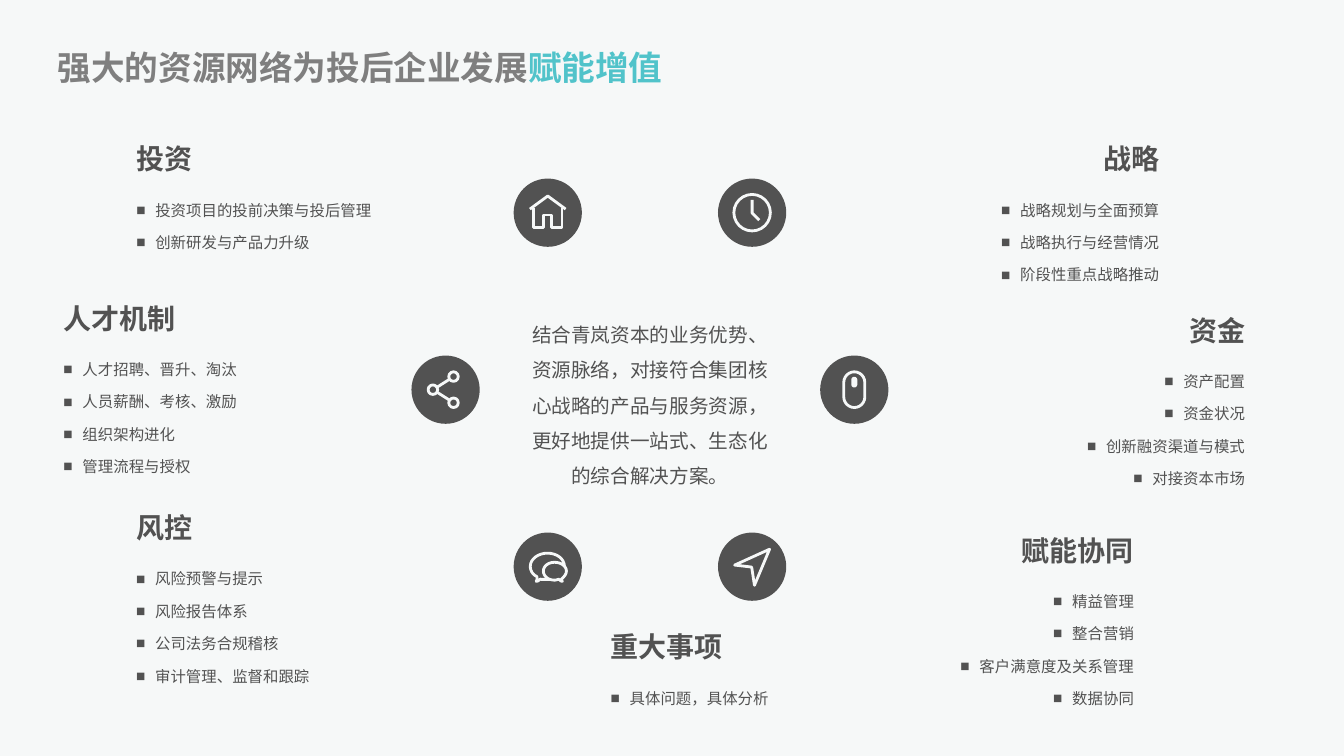
from math import cos, radians, sin

from lxml.etree import SubElement
from pptx import Presentation
from pptx.dml.color import RGBColor
from pptx.enum.shapes import MSO_CONNECTOR, MSO_SHAPE
from pptx.enum.text import MSO_ANCHOR, MSO_AUTO_SIZE, PP_ALIGN
from pptx.oxml.ns import qn
from pptx.util import Cm, Pt

COLORS = {"background": "F6F8F8", "dark": "525252", "title": "7F7F7F", "accent": "51C3CA"}
FONT = "Open Sans"
RING_CENTER = (16.38, 9.82)
RING_RADIUS = 5.15
BADGE_RADIUS = 0.86
TOPIC_WIDTH = 7.98
LEFT, CENTER, RIGHT = PP_ALIGN.LEFT, PP_ALIGN.CENTER, PP_ALIGN.RIGHT

# Heading, left, top, alignment, items
TOPICS = [
    ("投资", 3.18, 3.45, LEFT, ["投资项目的投前决策与投后管理", "创新研发与产品力升级"]),
    ("战略", 21.49, 3.45, RIGHT, ["战略规划与全面预算", "战略执行与经营情况", "阶段性重点战略推动"]),
    ("人才机制", 1.35, 7.47, LEFT,
     ["人才招聘、晋升、淘汰", "人员薪酬、考核、激励", "组织架构进化", "管理流程与授权"]),
    ("资金", 23.65, 7.77, RIGHT, ["资产配置", "资金状况", "创新融资渠道与模式", "对接资本市场"]),
    ("风控", 3.18, 12.75, LEFT,
     ["风险预警与提示", "风险报告体系", "公司法务合规稽核", "审计管理、监督和跟踪"]),
    ("赋能协同", 20.85, 13.31, RIGHT, ["精益管理", "整合营销", "客户满意度及关系管理", "数据协同"]),
    ("重大事项", 15.14, 15.75, LEFT, ["具体问题，具体分析"]),
]

# Cubic curves: a start point, then two controls and an end for each segment
LARGE_BUBBLE = [
    (0.06, 0.32), (0.04, 0.32), (0.01, 0.32), (-0.01, 0.32), (-0.06, 0.32), (-0.11, 0.32),
    (-0.17, 0.32), (-0.19, 0.29), (-0.22, 0.37), (-0.29, 0.37), (-0.29, 0.37), (-0.24, 0.27),
    (-0.29, 0.24), (-0.39, 0.19), (-0.44, 0.09), (-0.44, -0.01), (-0.44, -0.19),
    (-0.24, -0.34), (-0.01, -0.34), (0.24, -0.34), (0.42, -0.19), (0.42, -0.01),
]
SMALL_BUBBLE = [
    (-0.11, 0.11), (-0.11, 0.24), (0.01, 0.34), (0.17, 0.34), (0.22, 0.34), (0.24, 0.32),
    (0.29, 0.32), (0.29, 0.32), (0.32, 0.37), (0.37, 0.37), (0.37, 0.37), (0.32, 0.32),
    (0.37, 0.29), (0.42, 0.24), (0.47, 0.19), (0.47, 0.11), (0.47, -0.01), (0.34, -0.11),
    (0.17, -0.11), (0.01, -0.11), (-0.11, -0.01), (-0.11, 0.11),
]


def color(name):
    return RGBColor.from_string(COLORS[name])


def curve(points, steps=8):
    """Turn a chain of cubic curves into the points of a polyline."""
    line = [points[0]]
    for start in range(0, len(points) - 1, 3):
        segment = points[start:start + 4]
        for step in range(1, steps + 1):
            t = step / steps
            weights = ((1 - t) ** 3, 3 * t * (1 - t) ** 2, 3 * t * t * (1 - t), t ** 3)
            line.append(tuple(sum(w * p[axis] for w, p in zip(weights, segment))
                              for axis in (0, 1)))
    return line


class Badge:
    """A dark disc on the ring; icon parts are placed in cm from its centre."""

    def __init__(self, slide, angle):
        self.x = RING_CENTER[0] + RING_RADIUS * cos(radians(angle))
        self.y = RING_CENTER[1] - RING_RADIUS * sin(radians(angle))
        self.shapes = slide.shapes.add_group_shape().shapes
        disc = self.preset(MSO_SHAPE.OVAL, 0, 0, 2 * BADGE_RADIUS, 2 * BADGE_RADIUS)
        disc.line.fill.background()

    def point(self, x, y):
        return Cm(self.x + x), Cm(self.y + y)

    def style(self, shape):
        shape.shadow.inherit = False
        shape.fill.solid()
        shape.fill.fore_color.rgb = color("dark")
        self.stroke(shape)
        return shape

    def stroke(self, shape):
        shape.line.color.rgb = color("background")
        shape.line.width = Pt(2)

    def preset(self, kind, x, y, width, height):
        left, top = self.point(x - width / 2, y - height / 2)
        return self.style(self.shapes.add_shape(kind, left, top, Cm(width), Cm(height)))

    def pill(self, x, y, width, height):
        self.preset(MSO_SHAPE.ROUNDED_RECTANGLE, x, y, width, height).adjustments[0] = 0.5

    def outline(self, points, close=False):
        start, *rest = [self.point(x, y) for x, y in points]
        builder = self.shapes.build_freeform(*start)
        builder.add_line_segments(rest, close=close)
        self.style(builder.convert_to_shape())

    def line(self, start, end):
        connector = self.shapes.add_connector(
            MSO_CONNECTOR.STRAIGHT, *self.point(*start), *self.point(*end))
        self.stroke(connector)
        SubElement(connector.line._get_or_add_ln().getparent(), qn("a:effectLst"))


class ResourceSlide:
    def __init__(self, presentation):
        self.slide = presentation.slides.add_slide(presentation.slide_layouts[4])
        self.slide.background.fill.solid()
        self.slide.background.fill.fore_color.rgb = color("background")
        self.bodies = [shape for shape in self.slide.placeholders
                       if shape.placeholder_format.idx > 0]

    def place(self, shape, left, top, width, height):
        shape.left, shape.top, shape.width, shape.height = map(Cm, (left, top, width, height))
        frame = shape.text_frame
        frame.word_wrap = True
        frame.auto_size = MSO_AUTO_SIZE.NONE
        frame.vertical_anchor = MSO_ANCHOR.TOP
        return frame

    def title(self, plain, accented):
        frame = self.place(self.slide.shapes.title, 1.2, 1.17, 16.94, 1.19)
        paragraph = frame.paragraphs[0]
        paragraph.alignment = LEFT
        paragraph.line_spacing = 0.9
        for text, font, name in ((plain, "Noto Sans CJK SC", "title"),
                                 (accented, "Arial", "accent")):
            run = paragraph.add_run()
            run.text = text
            run.font.name, run.font.size, run.font.bold = font, Pt(24), True
            run.font.color.rgb = color(name)

    def text(self, box, lines, size, alignment=LEFT, spacing=1.0, bold=False, bullet=False):
        """Fill the next free body placeholder, or a text box once none is left."""
        shape = (self.bodies.pop(0) if self.bodies
                 else self.slide.shapes.add_textbox(*map(Cm, box)))
        frame = self.place(shape, *box)
        frame.text = "\n".join(lines)
        for paragraph in frame.paragraphs:
            if bullet:
                properties = paragraph._p.get_or_add_pPr()
                properties.set("marL", str(Cm(0.48)))
                properties.set("indent", str(-Cm(0.48)))
                SubElement(properties, qn("a:buFont"), typeface="Arial")
                SubElement(properties, qn("a:buChar"), char="■")
            paragraph.alignment = alignment
            paragraph.line_spacing = spacing
            paragraph.space_before = Pt(6)
            font = paragraph.font
            font.name, font.size, font.bold = FONT, Pt(size), bold
            font.color.rgb = color("dark")

    def topic(self, heading, left, top, alignment, items):
        self.text((left, top, TOPIC_WIDTH, 1.11), [heading], 20, alignment, bold=True)
        height = 0.86 + 0.83 * (len(items) - 1)
        self.text((left, top + 1.34, TOPIC_WIDTH, height), items, 11, alignment, 1.3, bullet=True)

    def icons(self):
        clock = Badge(self.slide, 60)
        clock.preset(MSO_SHAPE.OVAL, 0, 0, 0.92, 0.92)
        clock.outline([(0, -0.32), (0, 0.01), (0.18, 0.19)])

        home = Badge(self.slide, 120)
        home.outline([(0.45, -0.09), (0, -0.42), (-0.45, -0.09)])
        home.outline([(0.36, -0.11), (0.36, 0.37), (0.1, 0.37), (0.1, 0.06),
                      (-0.1, 0.06), (-0.1, 0.37), (-0.36, 0.37), (-0.36, -0.11)])

        share = Badge(self.slide, 180)
        for x, y in ((0.2, -0.33), (-0.32, 0), (0.2, 0.33)):
            share.preset(MSO_SHAPE.OVAL, x, y, 0.24, 0.24)
        for side in (1, -1):
            share.line((-0.22, 0.06 * side), (0.11, 0.27 * side))

        mouse = Badge(self.slide, 0)
        mouse.pill(0, 0, 0.53, 0.9)
        mouse.pill(0, -0.19, 0.08, 0.2)

        plane = Badge(self.slide, 300)
        plane.outline([(0.06, 0.47), (0.44, -0.44), (-0.44, -0.04), (-0.01, 0.01)], close=True)

        chat = Badge(self.slide, 240)
        chat.outline(curve(LARGE_BUBBLE))
        chat.outline(curve(SMALL_BUBBLE), close=True)


def main():
    presentation = Presentation()
    presentation.slide_width, presentation.slide_height = Cm(33.87), Cm(19.05)
    page = ResourceSlide(presentation)
    page.title("强大的资源网络为投后企业发展", "赋能增值")
    for topic in TOPICS:
        page.topic(*topic)
    page.icons()
    summary = ("结合青岚资本的业务优势、资源脉络，对接符合集团核心战略的产品与服务资源，"
               "更好地提供一站式、生态化的综合解决方案。")
    page.text((12.95, 7.72, 6.86, 4.75), [summary], 14, CENTER, 1.5)
    presentation.save("out.pptx")


if __name__ == "__main__":
    main()
